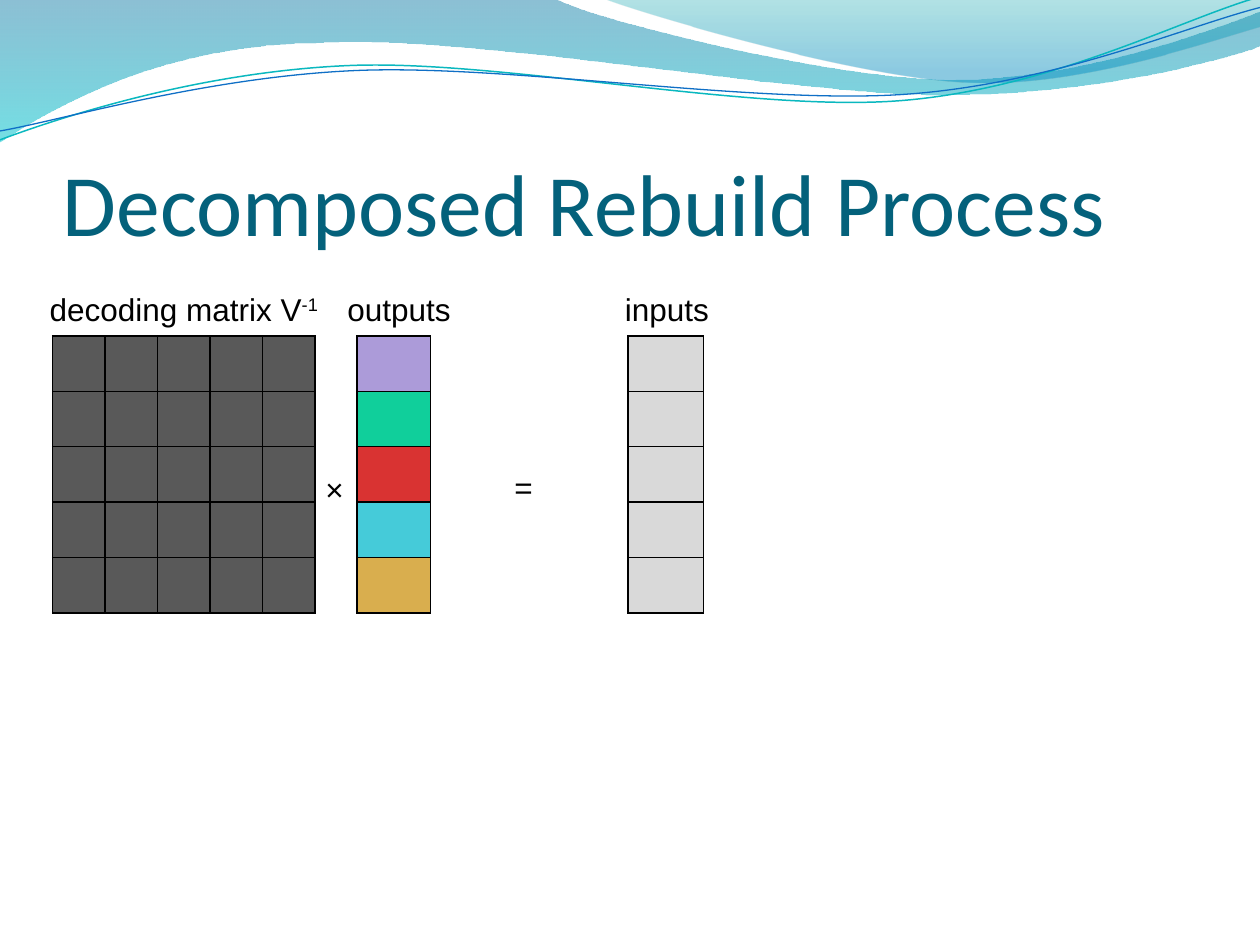
import math

import lxml.etree
import pptx
import pptx.dml.color
import pptx.enum.text
import pptx.oxml.ns
import pptx.util

Cm, Pt = pptx.util.Cm, pptx.util.Pt
ANCHOR, ALIGN = pptx.enum.text.MSO_ANCHOR, pptx.enum.text.PP_ALIGN

THEME = {
    "title": "04617B", "ink": "000000", "matrix": "595959", "input": "D9D9D9",
    "heading_font": "Calibri", "body_font": "Arial",
    "title_size": 50, "body_size": 18, "border": 1,
}

# Content: lengths in cm
TITLE = ("Decomposed Rebuild Process", 1.27, 1.96, 22.86, 3.17)
LABELS = [  # text, superscript, left, width
    ("decoding matrix V", "-1", 0.63, 6.15),
    ("outputs", "", 6.56, 2.97),
    ("inputs", "", 9.95, 6.99),
]
OPERATORS = [("×", 6.31, 9.35), ("=", 10.12, 9.32)]
OUTPUT_COLORS = ["AC9BD9", "10CF9B", "D93332", "45CBD9", "D9AE4E"]
SIZE = len(OUTPUT_COLORS)
GRIDS = [  # left, width, cell colours by row
    (7.2, 1.48, [[color] for color in OUTPUT_COLORS]),
    (1.06, 5.29, [[THEME["matrix"]] * SIZE] * SIZE),
    (12.66, 1.52, [[THEME["input"]]] * SIZE),
]
LABEL_TOP, LABEL_HEIGHT, GRID_TOP, GRID_HEIGHT = 5.72, 1.02, 6.77, 5.59

# Waves: a 2-number step is a straight line, a 6-number step a Bezier curve
WAVE_UNIT = Cm(2.54)
STRAND_TILT = -2.7
BANDS = [  # start, steps, gradient stops (position, colour, opacity %)
    ((0, -0.01), [
        (4.4, -0.01), (4.76, 0.17, 6.64, 0.63, 7.58, 0.63),
        (8.53, 0.63, 9.58, 0.26, 10, 0.09), (10.01, 0.36),
        (9.83, 0.44, 8.7, 0.76, 7.46, 0.75), (6.22, 0.75, 3.82, 0.28, 2.57, 0.34),
        (1.29, 0.35, 0.46, 0.83, -0.01, 1.13),
    ], [(0, "0074A1", 45), (1, "00C6CF", 55)]),
    ((4.79, -0.01), [
        (5.09, 0.11, 6.82, 0.62, 7.69, 0.65),
        (8.56, 0.69, 9.61, 0.32, 10, 0.21), (10, 0),
    ], [(0, "00A1A9", 30), (0.8, "008BBF", 45)]),
]
STRANDS = [  # start, steps, centre, colour, line width
    ((0, 1.11), [
        (0.48, 0.93, 1.58, 0.57, 2.77, 0.52), (3.95, 0.47, 5.93, 0.89, 7.13, 0.8),
        (8.33, 0.71, 9.38, 0.15, 9.98, -0.02),
    ], (4.99, 0.58), "0AB8BF", 0.85),
    ((0, 1.04), [
        (0.47, 0.96, 1.64, 0.61, 2.83, 0.56), (4.03, 0.51, 5.97, 0.83, 7.17, 0.75),
        (8.36, 0.67, 9.41, 0.21, 10, 0.06),
    ], (5, 0.59), "0F6FC6", 0.75),
]


def rgb(color):
    return pptx.dml.color.RGBColor.from_string(color)


def add_child(parent, tag, **attributes):
    return lxml.etree.SubElement(parent, pptx.oxml.ns.qn(tag), **attributes)


def add_text(slide, text, left, top, width, height, *, superscript="",
             font=THEME["body_font"], size=THEME["body_size"], color=THEME["ink"],
             align=ALIGN.LEFT, anchor=ANCHOR.TOP, wrap=True,
             side_margin=0.25, bottom_margin=0.13):
    frame = slide.shapes.add_textbox(Cm(left), Cm(top), Cm(width), Cm(height)).text_frame
    frame.word_wrap = wrap
    frame.vertical_anchor = anchor
    frame.margin_left = frame.margin_right = Cm(side_margin)
    frame.margin_bottom = Cm(bottom_margin)
    paragraph = frame.paragraphs[0]
    paragraph.alignment = align
    for part in filter(None, (text, superscript)):
        run = paragraph.add_run()
        run.text = part
        run.font.name, run.font.size = font, Pt(size)
        run.font.color.rgb = rgb(color)
    if superscript:
        run.font._element.set("baseline", "30000")


def turn(point, centre, degrees):
    angle = math.radians(degrees)
    dx, dy = point[0] - centre[0], point[1] - centre[1]
    return (centre[0] + dx * math.cos(angle) - dy * math.sin(angle),
            centre[1] + dx * math.sin(angle) + dy * math.cos(angle))


def add_wave(slide, start, steps, closed, tilt=0, centre=(0, 0)):
    points = [start] + [step[i:i + 2] for step in steps for i in range(0, len(step), 2)]
    points = [tuple(round(v * WAVE_UNIT) for v in turn(point, centre, -tilt))
              for point in points]
    builder = slide.shapes.build_freeform(*points[0])
    builder.add_line_segments(points[1:], close=closed)
    wave = builder.convert_to_shape()
    wave.shadow.inherit = False
    wave.rotation = tilt
    # Each run of three points in a curved step becomes one Bezier segment
    segments = iter(wave.element.xpath(".//a:path/a:lnTo"))
    for step in steps:
        first, *others = [next(segments) for _ in range(len(step) // 2)]
        if others:
            first.tag = pptx.oxml.ns.qn("a:cubicBezTo")
        for other in others:
            first.append(other[0])
            other.getparent().remove(other)
    return wave


def add_band(slide, start, steps, stops):
    band = add_wave(slide, start, steps, closed=True)
    band.line.fill.background()
    band.fill.gradient()
    band.fill.gradient_angle = 270
    for stop, (position, color, _) in zip(band.fill.gradient_stops, stops):
        stop.position = position
        stop.color.rgb = rgb(color)
    for tint, (_, _, opacity) in zip(band.element.xpath(".//a:gs/a:srgbClr"), stops):
        add_child(tint, "a:alpha", val=str(opacity * 1000))


def add_strand(slide, start, steps, centre, color, width):
    strand = add_wave(slide, start, steps, closed=False, tilt=STRAND_TILT, centre=centre)
    strand.fill.background()
    strand.line.color.rgb = rgb(color)
    strand.line.width = Pt(width)


def add_grid(slide, left, width, rows):
    table = slide.shapes.add_table(len(rows), len(rows[0]), Cm(left), Cm(GRID_TOP),
                                   Cm(width), Cm(GRID_HEIGHT)).table
    table.first_row = table.horz_banding = False
    for r, colors in enumerate(rows):
        for c, color in enumerate(colors):
            cell = table.cell(r, c)
            properties = cell._tc.get_or_add_tcPr()
            for side in ("a:lnL", "a:lnR", "a:lnT", "a:lnB"):
                border = add_child(properties, side, w=str(Pt(THEME["border"])))
                add_child(add_child(border, "a:solidFill"), "a:srgbClr", val=THEME["ink"])
            cell.fill.solid()
            cell.fill.fore_color.rgb = rgb(color)


def main():
    deck = pptx.Presentation()
    deck.slide_width, deck.slide_height = Cm(25.4), Cm(19.05)
    slide = deck.slides.add_slide(deck.slide_layouts[6])

    # Waves along the top
    for band in BANDS:
        add_band(slide, *band)
    for strand in STRANDS:
        add_strand(slide, *strand)

    # Title
    add_text(slide, *TITLE, font=THEME["heading_font"], size=THEME["title_size"],
             color=THEME["title"], anchor=ANCHOR.BOTTOM, side_margin=0, bottom_margin=0)

    # Matrix equation
    for grid in GRIDS:
        add_grid(slide, *grid)
    for text, superscript, left, width in LABELS:
        add_text(slide, text, left, LABEL_TOP, width, LABEL_HEIGHT,
                 superscript=superscript, align=ALIGN.CENTER)
    for text, left, top in OPERATORS:
        add_text(slide, text, left, top, 0.89, LABEL_HEIGHT, wrap=False)

    deck.save("out.pptx")


if __name__ == "__main__":
    main()
